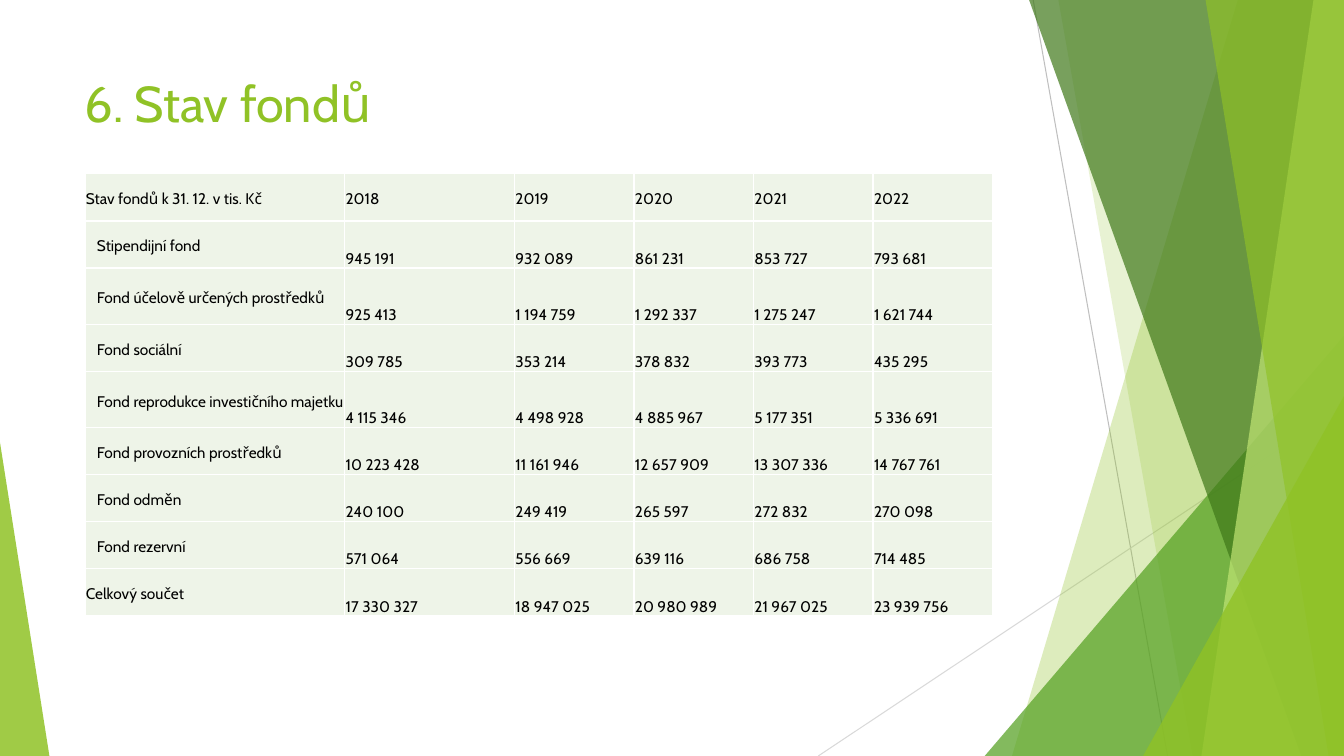
from lxml import etree
from pptx import Presentation
from pptx.dml.color import RGBColor
from pptx.enum.shapes import MSO_CONNECTOR, MSO_SHAPE
from pptx.enum.text import MSO_ANCHOR, PP_ALIGN
from pptx.oxml.ns import qn
from pptx.util import Pt

STRAIGHT = MSO_CONNECTOR.STRAIGHT
TRIANGLE = MSO_SHAPE.ISOSCELES_TRIANGLE
TOP, MIDDLE, BOTTOM = MSO_ANCHOR.TOP, MSO_ANCHOR.MIDDLE, MSO_ANCHOR.BOTTOM
LEFT = PP_ALIGN.LEFT

LIME = RGBColor(0x90, 0xC2, 0x26)
GREEN = RGBColor(0x54, 0xA0, 0x21)
FOREST = RGBColor(0x3F, 0x78, 0x19)
PALE = RGBColor(0xC0, 0xE4, 0x74)
GREY = RGBColor(0xBF, 0xBF, 0xBF)
SILVER = RGBColor(0xD9, 0xD9, 0xD9)
MINT = RGBColor(0xEE, 0xF4, 0xE8)
WHITE = RGBColor(0xFF, 0xFF, 0xFF)
BLACK = RGBColor(0, 0, 0)

FONT = "Cabin"
WIDTH, HEIGHT = 960, 540
THIN, WIDE = 0.7, 8.6

COLS = [185.5, 121.3] + [85.4] * 4
LOW, TALL = 33.6, 40.3
HEAD = ["Stav fondů k 31. 12. v tis. Kč", "2018", "2019", "2020", "2021", "2022"]
TOTAL = ["Celkový součet", "17 330 327", "18 947 025", "20 980 989", "21 967 025", "23 939 756"]
FUNDS = [
    ["Stipendijní fond", "945 191", "932 089", "861 231", "853 727", "793 681"],
    ["Fond účelově určených prostředků",
     "925 413", "1 194 759", "1 292 337", "1 275 247", "1 621 744"],
    ["Fond sociální", "309 785", "353 214", "378 832", "393 773", "435 295"],
    ["Fond reprodukce investičního majetku",
     "4 115 346", "4 498 928", "4 885 967", "5 177 351", "5 336 691"],
    ["Fond provozních prostředků",
     "10 223 428", "11 161 946", "12 657 909", "13 307 336", "14 767 761"],
    ["Fond odměn", "240 100", "249 419", "265 597", "272 832", "270 098"],
    ["Fond rezervní", "571 064", "556 669", "639 116", "686 758", "714 485"],
]


def paint(shape, color, alpha):
    """Fill with a color at alpha percent opacity, without outline or shadow."""
    shape.shadow.inherit = False
    shape.line.fill.background()
    shape.fill.solid()
    shape.fill.fore_color.rgb = color
    tint = shape.fill._xPr.find(qn("a:solidFill"))[0]
    etree.SubElement(tint, qn("a:alpha"), val=str(alpha * 1000))


def add_line(slide, start, end, color):
    line = slide.shapes.add_connector(STRAIGHT, *map(Pt, start + end))
    line.line.color.rgb = color
    line.line.width = Pt(0.75)
    etree.SubElement(line.element.spPr, qn("a:effectLst"))


def add_band(slide, top, base, color, alpha):
    """Fill from a slanted edge (x at top, x at base) to the right slide edge."""
    pen = slide.shapes.build_freeform(Pt(top), 0)
    corners = [(WIDTH, 0), (WIDTH, HEIGHT), (base, HEIGHT)]
    pen.add_line_segments([(Pt(x), Pt(y)) for x, y in corners])
    paint(pen.convert_to_shape(), color, alpha)


def add_wedge(slide, left, top, right, peak, color, alpha):
    """Triangle on the slide's bottom edge; peak is 0 (left) to 1 (right)."""
    wedge = slide.shapes.add_shape(
        TRIANGLE, Pt(left), Pt(top), Pt(right - left), Pt(HEIGHT - top))
    wedge.adjustments[0] = peak
    paint(wedge, color, alpha)


def add_decor(slide):
    add_line(slide, (738, 0), (834, HEIGHT), GREY)
    add_line(slide, (WIDTH, 290), (584.5, HEIGHT), SILVER)
    add_band(slide, 884.2, 722.9, LIME, 30)
    add_band(slide, 756, 851.8, LIME, 20)
    add_wedge(slide, 703.4, 239.8, WIDTH, 1, GREEN, 72)
    add_band(slide, 735.1, 929.5, FOREST, 70)
    add_band(slide, 938.2, 858.2, PALE, 70)
    add_band(slide, 861.1, 949, LIME, 65)
    add_wedge(slide, 816.5, 283, WIDTH, 1, LIME, 80)
    add_wedge(slide, 0, 316.1, 35.3, 0, LIME, 85)


def set_title(slide, text):
    title = slide.shapes.title
    title.left, title.top, title.width, title.height = map(Pt, (53.3, 48, 676.8, 104))
    title.text_frame.text = text
    title.text_frame.vertical_anchor = TOP
    para = title.text_frame.paragraphs[0]
    para.alignment = LEFT
    para.font.name, para.font.size = FONT, Pt(36)
    para.font.color.rgb = LIME
    title.element.getparent().append(title.element)


def add_rules(cell):
    """Give a cell white borders on all sides; call before filling it."""
    props = cell._tc.get_or_add_tcPr()
    for side in "LRTB":
        rule = etree.SubElement(props, qn("a:ln" + side), w=str(Pt(1)))
        fill = etree.SubElement(rule, qn("a:solidFill"))
        etree.SubElement(fill, qn("a:srgbClr"), val=str(WHITE))


def fill_cell(cell, text, anchor, left, right):
    add_rules(cell)
    cell.fill.solid()
    cell.fill.fore_color.rgb = MINT
    cell.vertical_anchor = anchor
    cell.margin_left, cell.margin_right = Pt(left), Pt(right)
    cell.margin_top, cell.margin_bottom = Pt(THIN), 0
    cell.text = text
    para = cell.text_frame.paragraphs[0]
    para.line_spacing, para.space_after = 1.15, Pt(10)
    para.font.name, para.font.size = FONT, Pt(11)
    para.font.color.rgb = BLACK


def add_funds(slide):
    rows = [HEAD, *FUNDS, TOTAL]
    highs = [TALL if len(row[0]) > 30 and row in FUNDS else LOW for row in rows]
    frame = slide.shapes.add_table(
        len(rows), len(COLS), Pt(60.7), Pt(124.2), Pt(sum(COLS)), Pt(sum(highs)))
    table = frame.table
    table.first_row = table.horz_banding = False
    for col, width in zip(table.columns, COLS):
        col.width = Pt(width)
    for r, (row, high) in enumerate(zip(rows, highs)):
        table.rows[r].height = Pt(high)
        for c, text in enumerate(row):
            label = c == 0 or row is HEAD
            left = WIDE if c == 0 and row in FUNDS else THIN
            fill_cell(table.cell(r, c), text, MIDDLE if label else BOTTOM,
                      left, THIN if label else WIDE)


def main():
    deck = Presentation()
    deck.slide_width, deck.slide_height = Pt(WIDTH), Pt(HEIGHT)
    slide = deck.slides.add_slide(deck.slide_layouts[5])
    add_decor(slide)
    set_title(slide, "6. Stav fondů")
    add_funds(slide)
    deck.save("out.pptx")


if __name__ == "__main__":
    main()
